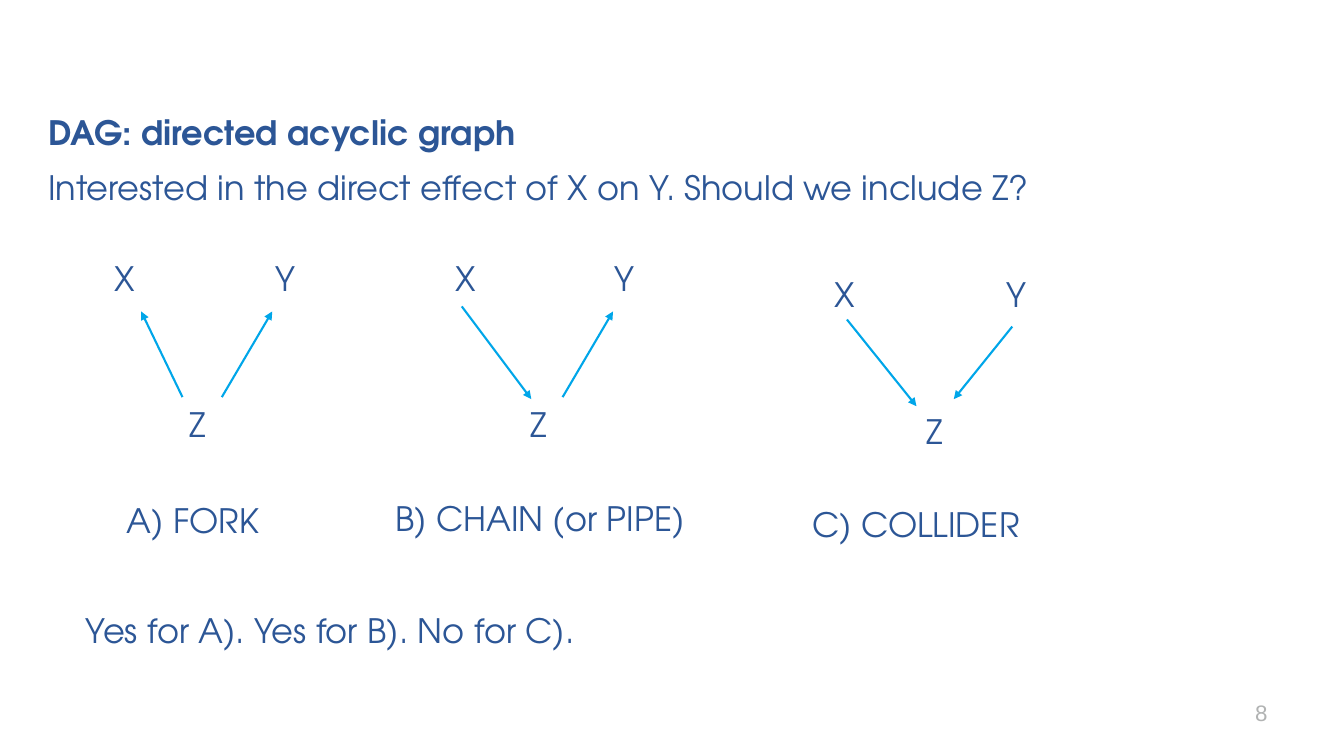
from lxml.etree import SubElement
from pptx import Presentation
from pptx.dml.color import RGBColor
from pptx.enum.shapes import MSO_CONNECTOR
from pptx.enum.text import MSO_ANCHOR, MSO_AUTO_SIZE, PP_ALIGN
from pptx.oxml.ns import qn
from pptx.util import Inches, Pt

GRAPHS = [
    {
        "nodes": [("X", 1.04, 2.51), ("Y", 2.63, 2.51), ("Z", 1.78, 3.96)],
        "arrows": [((1.81, 3.94), (1.4, 3.09)), ((2.2, 3.94), (2.7, 3.09))],
        "caption": ("A) FORK", 1.16, 4.91, 2.67),
    },
    {
        "nodes": [("X", 4.42, 2.51), ("Y", 6, 2.51), ("Z", 5.16, 3.96)],
        "arrows": [((4.58, 3.04), (5.27, 3.96)), ((5.58, 3.94), (6.08, 3.09))],
        "caption": ("B) CHAIN (or PIPE)", 3.82, 4.89, 3.88),
    },
    {
        "nodes": [("X", 8.18, 2.67), ("Y", 9.88, 2.67), ("Z", 9.09, 4.03)],
        "arrows": [((8.4, 3.17), (9.09, 4.03)), ((10.04, 3.24), (9.46, 3.96))],
        "caption": ("C) COLLIDER", 7.96, 4.95, 2.67),
    },
]


def color(value):
    """Turn a hex string into a colour."""
    return RGBColor.from_string(value)


def write(box, text, font="TeX Gyre Adventor", size=24, ink="2C5696", bold=False,
          align=PP_ALIGN.LEFT, anchor=MSO_ANCHOR.TOP, grow=MSO_AUTO_SIZE.SHAPE_TO_FIT_TEXT):
    """Put formatted text into a shape."""
    frame = box.text_frame
    frame.word_wrap = True
    frame.auto_size = grow
    frame.vertical_anchor = anchor
    para = frame.paragraphs[0]
    para.alignment = align
    span = para.add_run()
    span.text = text
    span.font.name = font
    span.font.size = Pt(size)
    span.font.bold = bold
    span.font.color.rgb = color(ink)


class GraphPage:
    """A slide of causal graphs with one shared style."""

    arrow_ink = "00A6E9"
    arrow_width = 1.5
    line_height = 0.5

    def __init__(self, deck):
        """Add a title-only slide to the deck."""
        self.page = deck.slides.add_slide(deck.slide_layouts[5])

    def title(self, text, left, top, width):
        """Place and fill the title placeholder."""
        box = self.page.shapes.title
        box.left, box.top = Inches(left), Inches(top)
        box.width, box.height = Inches(width), Inches(self.line_height)
        write(box, text, bold=True)

    def text(self, text, left, top, width, height=line_height, **style):
        """Add a text box."""
        box = self.page.shapes.add_textbox(
            Inches(left), Inches(top), Inches(width), Inches(height))
        write(box, text, **style)

    def arrow(self, start, end):
        """Add an arrow pointing at its end."""
        line = self.page.shapes.add_connector(
            MSO_CONNECTOR.STRAIGHT, *(Inches(value) for value in start + end))
        line.line.color.rgb = color(self.arrow_ink)
        line.line.width = Pt(self.arrow_width)
        SubElement(line.line._get_or_add_ln(), qn("a:tailEnd"), type="triangle")
        SubElement(line._element.spPr, qn("a:effectLst"))

    def graph(self, nodes, arrows, caption):
        """Add the nodes, arrows and caption of one graph."""
        for label, left, top in nodes:
            self.text(label, left, top, 0.58)
        for start, end in arrows:
            self.arrow(start, end)
        self.text(*caption)


def main():
    """Build and save the deck."""
    deck = Presentation()
    deck.slide_width, deck.slide_height = Inches(13.33), Inches(7.5)
    page = GraphPage(deck)
    page.title("DAG: directed acyclic graph", 0.38, 1.06, 8.46)
    page.text("Interested in the direct effect of X on Y. Should we include Z?",
              0.38, 1.61, 12.79)
    for graph in GRAPHS:
        page.graph(**graph)
    page.text("Yes for A). Yes for B). No for C).", 0.75, 6, 7.92)
    page.text("8", 11.17, 6.87, 1.5, 0.4, font="Arial", size=16, ink="B1B3B3",
              align=PP_ALIGN.RIGHT, anchor=MSO_ANCHOR.MIDDLE, grow=MSO_AUTO_SIZE.NONE)
    deck.save("out.pptx")


if __name__ == "__main__":
    main()
